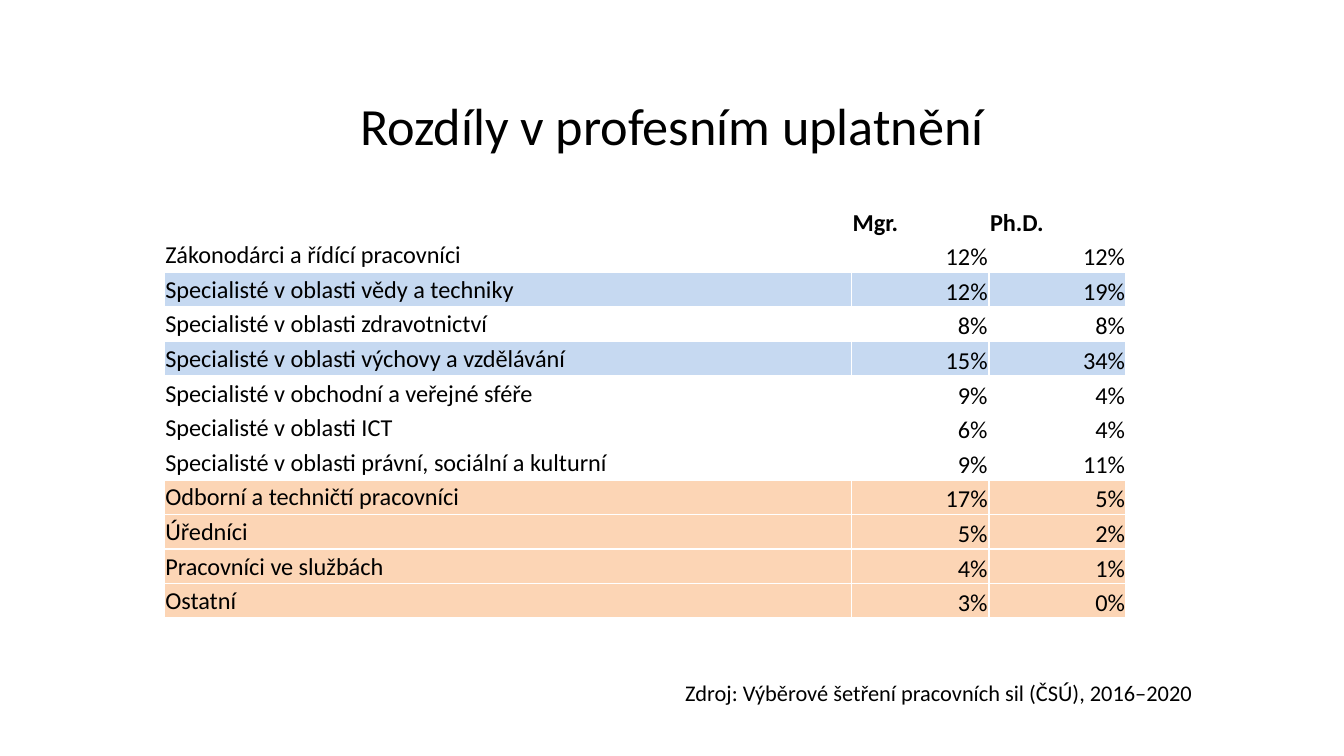
from lxml import etree
from pptx import Presentation
from pptx.dml.color import RGBColor
from pptx.enum.text import MSO_ANCHOR, PP_ALIGN
from pptx.oxml.ns import qn
from pptx.util import Inches, Pt

LEFT, CENTER, RIGHT = PP_ALIGN.LEFT, PP_ALIGN.CENTER, PP_ALIGN.RIGHT
TOP, MIDDLE, BOTTOM = MSO_ANCHOR.TOP, MSO_ANCHOR.MIDDLE, MSO_ANCHOR.BOTTOM
WIDTH = Inches(10)
HEIGHT = WIDTH * 9 // 16
COLORS = {"text": "000000", "plain": "FFFFFF", "blue": "C6D9F1",
          "peach": "FCD5B5", "line": "FFFFFF"}
SHARES = (5, 1, 1)
INSETS = {"margin_left": Inches(0.01), "margin_right": Inches(0.01),
          "margin_top": Inches(0.01), "margin_bottom": 0}
ROWS = [
    ("", "Mgr.", "Ph.D.", "plain"),
    ("Zákonodárci a řídící pracovníci", "12%", "12%", "plain"),
    ("Specialisté v oblasti vědy a techniky", "12%", "19%", "blue"),
    ("Specialisté v oblasti zdravotnictví", "8%", "8%", "plain"),
    ("Specialisté v oblasti výchovy a vzdělávání", "15%", "34%", "blue"),
    ("Specialisté v obchodní a veřejné sféře", "9%", "4%", "plain"),
    ("Specialisté v oblasti ICT", "6%", "4%", "plain"),
    ("Specialisté v oblasti právní, sociální a kulturní", "9%", "11%", "plain"),
    ("Odborní a techničtí pracovníci", "17%", "5%", "peach"),
    ("Úředníci", "5%", "2%", "peach"),
    ("Pracovníci ve službách", "4%", "1%", "peach"),
    ("Ostatní", "3%", "0%", "peach"),
]


def color(name):
    return RGBColor.from_string(COLORS[name])


def apply(target, values):
    for name, value in values.items():
        setattr(target, name, value)


def write(frame, text, size, align=LEFT, bold=False):
    para = frame.paragraphs[0]
    para.alignment = align
    if not text:
        etree.SubElement(para._p, qn("a:endParaRPr"), sz=str(size * 100))
        return
    run = para.add_run()
    run.text = text
    apply(run.font, {"name": "Calibri", "size": Pt(size), "bold": bold})
    run.font.color.rgb = color("text")


def add_label(slide, box, text, size, align=LEFT, anchor=TOP):
    x, y, w, h = box
    label = slide.shapes.add_textbox(
        int(x * WIDTH), int(y * HEIGHT), int(w * WIDTH), int(h * HEIGHT))
    apply(label.text_frame, {"word_wrap": True, "vertical_anchor": anchor})
    write(label.text_frame, text, size, align)


def add_edges(cell):
    props = cell._tc.get_or_add_tcPr()
    for spot, side in enumerate(("lnL", "lnR", "lnT", "lnB")):
        line = etree.Element(qn(f"a:{side}"), w=str(Pt(1)))
        fill = etree.SubElement(line, qn("a:solidFill"))
        etree.SubElement(fill, qn("a:srgbClr"), val=COLORS["line"])
        props.insert(spot, line)


def fill_cell(cell, text, tint, head, first):
    apply(cell, INSETS)
    cell.vertical_anchor = MIDDLE if first and not head else BOTTOM
    cell.fill.solid()
    cell.fill.fore_color.rgb = color(tint)
    add_edges(cell)
    write(cell.text_frame, text, 13, LEFT if head or first else RIGHT, head)


def add_grid(slide):
    width, height = Inches(7.16), Inches(3.09)
    table = slide.shapes.add_table(
        len(ROWS), len(SHARES), Inches(1.22), Inches(1.51), width, height).table
    apply(table, {"first_row": False, "horz_banding": False})
    for col, share in zip(table.columns, SHARES):
        col.width = width * share // sum(SHARES)
    for r, (*texts, tint) in enumerate(ROWS):
        table.rows[r].height = height // len(ROWS)
        for c, text in enumerate(texts):
            fill_cell(table.cell(r, c), text, tint, r == 0, c == 0)


def main():
    deck = Presentation()
    apply(deck, {"slide_width": WIDTH, "slide_height": HEIGHT})
    slide = deck.slides.add_slide(deck.slide_layouts[6])
    add_label(slide, (0.05, 0.08, 0.9, 0.17),
              "Rozdíly v profesním uplatnění", 28, CENTER, MIDDLE)
    add_grid(slide)
    add_label(slide, (0.5, 0.89, 0.41, 0.05),
              "Zdroj: Výběrové šetření pracovních sil (ČSÚ), 2016–2020", 12)
    deck.save("out.pptx")


if __name__ == "__main__":
    main()
